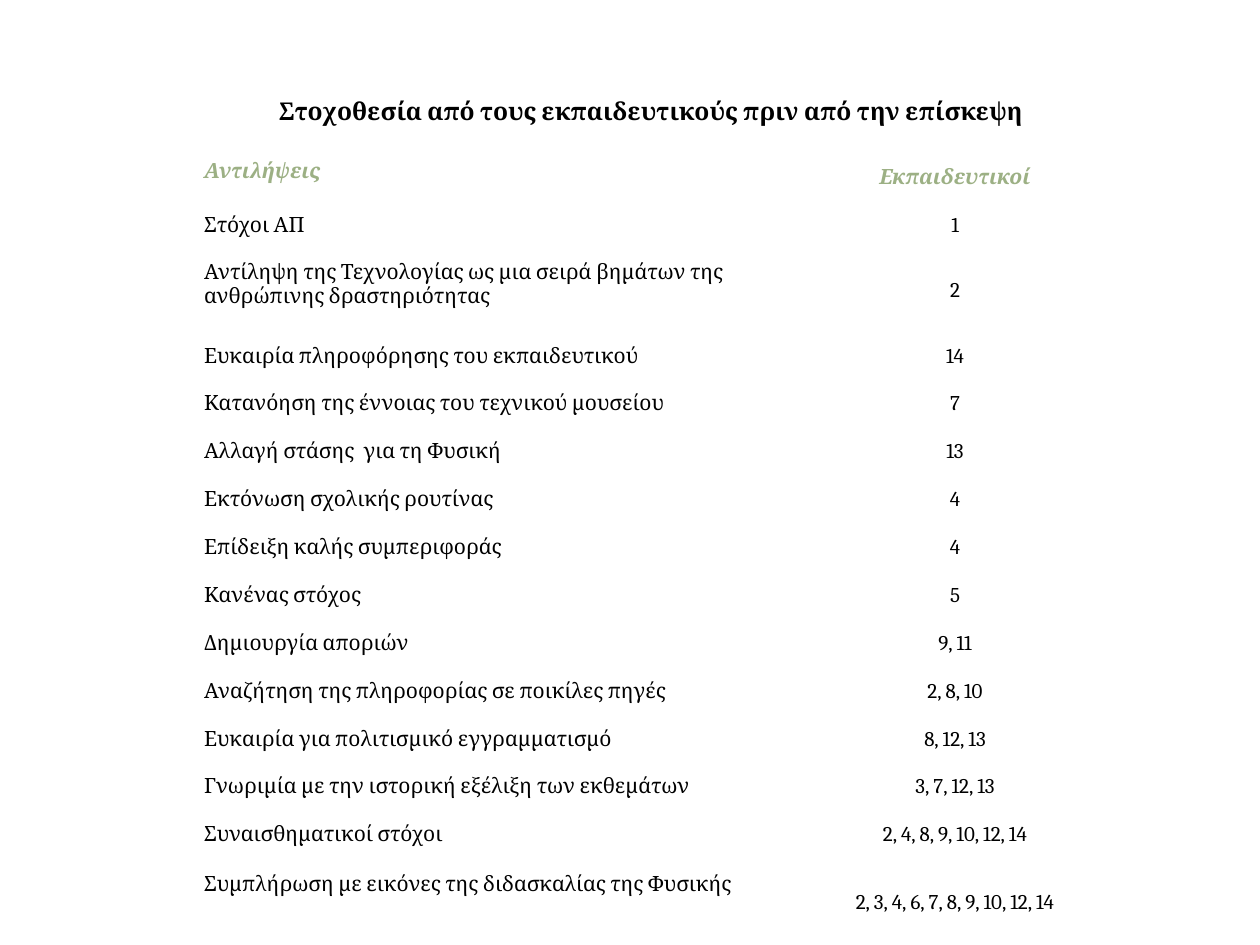
from dataclasses import dataclass
from typing import Optional

from pptx import Presentation
from pptx.dml.color import RGBColor
from pptx.enum import text
from pptx.util import Inches, Pt

COLORS = {"ink": "000000", "heading": "9CB084"}
FONT = "Cambria"
ROW_HEIGHT = 0.38
VALUE_SPACING = 1.5


@dataclass
class Style:
    size: int = 12
    color: str = "ink"
    bold: bool = False
    italic: bool = False


@dataclass
class Goal:
    label: str
    teachers: str
    height: float = ROW_HEIGHT
    spacing: Optional[float] = VALUE_SPACING
    bottom: float = 0
    style: Style = Style


TITLE = Style(size=14, bold=True)
HEADING = Style(color="heading", bold=True, italic=True)
BODY = Style()

title_text = "Στοχοθεσία από τους εκπαιδευτικούς πριν από την επίσκεψη"
title_height = 0.55
goals = [
    Goal("Αντιλήψεις", "Εκπαιδευτικοί", spacing=None, style=HEADING),
    Goal("Στόχοι ΑΠ", "1", style=BODY),
    Goal("Αντίληψη της Τεχνολογίας ως μια σειρά βημάτων της ανθρώπινης δραστηριότητας",
         "2", height=0.66, spacing=None, style=BODY),
    Goal("Ευκαιρία πληροφόρησης του εκπαιδευτικού", "14", style=BODY),
    Goal("Κατανόηση της έννοιας του τεχνικού μουσείου", "7", style=BODY),
    Goal("Αλλαγή στάσης  για τη Φυσική", "13", style=BODY),
    Goal("Εκτόνωση σχολικής ρουτίνας", "4", style=BODY),
    Goal("Επίδειξη καλής συμπεριφοράς", "4", style=BODY),
    Goal("Κανένας στόχος", "5", style=BODY),
    Goal("Δημιουργία αποριών", "9, 11", style=BODY),
    Goal("Αναζήτηση της πληροφορίας σε ποικίλες πηγές", "2, 8, 10", style=BODY),
    Goal("Ευκαιρία για πολιτισμικό εγγραμματισμό", "8, 12, 13", style=BODY),
    Goal("Γνωριμία με την ιστορική εξέλιξη των εκθεμάτων", "3, 7, 12, 13", style=BODY),
    Goal("Συναισθηματικοί στόχοι", "2, 4, 8, 9, 10, 12, 14", style=BODY),
    Goal("Συμπλήρωση με εικόνες της διδασκαλίας της Φυσικής",
         "2, 3, 4, 6, 7, 8, 9, 10, 12, 14", height=0.7, spacing=None, bottom=0.2,
         style=BODY),
]


def write_cell(cell, words: str, style: Style, centered: bool = False,
               spacing: Optional[float] = None, bottom: float = 0) -> None:
    cell.fill.background()
    cell.vertical_anchor = text.MSO_ANCHOR.MIDDLE
    cell.margin_left = cell.margin_right = Inches(0.06)
    cell.margin_top, cell.margin_bottom = 0, Inches(bottom)
    cell.text_frame.text = words
    line = cell.text_frame.paragraphs[0]
    line.alignment = text.PP_ALIGN.CENTER if centered else text.PP_ALIGN.LEFT
    line.line_spacing = spacing
    font = line.runs[0].font
    font.name, font.size = FONT, Pt(style.size)
    font.bold, font.italic = style.bold, style.italic
    font.color.rgb = RGBColor.from_string(COLORS[style.color])


# Slide
deck = Presentation()
deck.slide_width, deck.slide_height = Inches(10), Inches(7.5)
slide = deck.slides.add_slide(deck.slide_layouts[6])

# Table grid
heights = [title_height] + [goal.height for goal in goals]
widths = [4.82, 2.4]
goal_table = slide.shapes.add_table(
    len(heights), len(widths), Inches(1.56), Inches(0.62),
    Inches(sum(widths)), Inches(sum(heights))).table
goal_table.first_row = goal_table.horz_banding = False
for column, width in zip(goal_table.columns, widths):
    column.width = Inches(width)
for row, height in zip(goal_table.rows, heights):
    row.height = Inches(height)

# Title row across both columns
goal_table.cell(0, 0).merge(goal_table.cell(0, 1))
write_cell(goal_table.cell(0, 0), title_text, TITLE, centered=True)
goal_table.cell(0, 1).fill.background()

# Headings and goals
for number, goal in enumerate(goals, start=1):
    write_cell(goal_table.cell(number, 0), goal.label, goal.style,
               spacing=goal.spacing, bottom=goal.bottom)
    write_cell(goal_table.cell(number, 1), goal.teachers, goal.style,
               centered=True, spacing=VALUE_SPACING)

deck.save("out.pptx")
